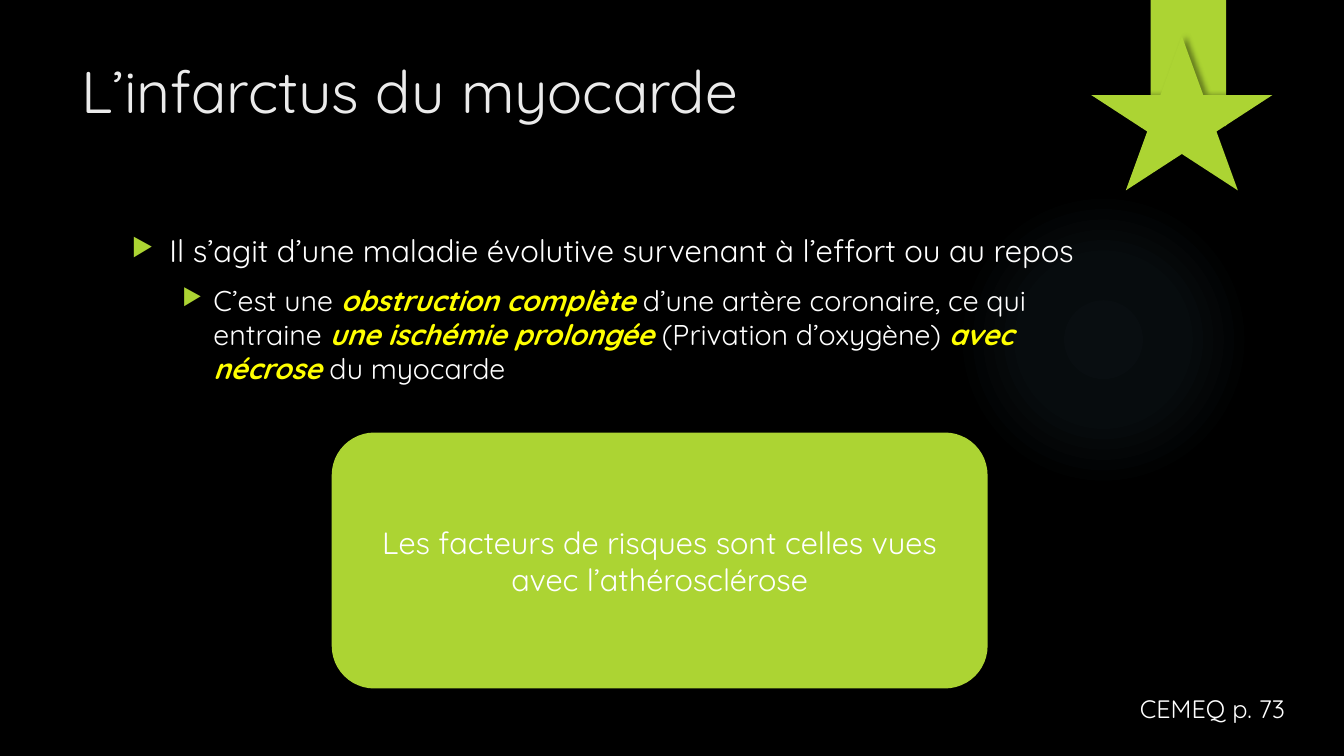
from lxml import etree
from pptx import Presentation
from pptx.dml.color import RGBColor
from pptx.enum.shapes import MSO_SHAPE
from pptx.enum.text import MSO_ANCHOR, MSO_AUTO_SIZE, PP_ALIGN
from pptx.oxml import parse_xml
from pptx.oxml.ns import qn
from pptx.util import Cm, Pt

LEFT, CENTER = PP_ALIGN.LEFT, PP_ALIGN.CENTER
TOP, MIDDLE = MSO_ANCHOR.TOP, MSO_ANCHOR.MIDDLE
NO_FIT = MSO_AUTO_SIZE.NONE
GREEN, WHITE, YELLOW = "ACD433", "FFFFFF", "FFFF00"
DRAWING = "http://schemas.openxmlformats.org/drawingml/2006/main"


def color(hex_code):
    return RGBColor.from_string(hex_code)


def add_span(para, text, hex_code, **formats):
    span = para.add_run()
    span.text = text
    span.font.color.rgb = color(hex_code)
    for name, value in {"name": "Quicksand", **formats}.items():
        setattr(span.font, name, value)


deck = Presentation()
deck.slide_width, deck.slide_height = Cm(33.87), Cm(19.05)
page = deck.slides.add_slide(deck.slide_layouts[5])
page.background.fill.solid()
page.background.fill.fore_color.rgb = color("000000")

# Faint blue glow, fading into the black background
glow = page.shapes.add_shape(MSO_SHAPE.OVAL, Cm(23.9), Cm(4.65), Cm(7.82), Cm(7.82))
glow.shadow.inherit = False
glow.line.fill.background()
glow.fill.background()
stops = "".join(
    f'<a:gs pos="{place * 1000}"><a:srgbClr val="{hex_code}"/></a:gs>'
    for place, hex_code in ((0, "090E11"), (36, "070C0E"), (69, "000000")))
gradient = parse_xml(
    f'<a:gradFill xmlns:a="{DRAWING}"><a:gsLst>{stops}</a:gsLst><a:path path="circle">'
    '<a:fillToRect l="50000" t="50000" r="50000" b="50000"/></a:path></a:gradFill>')
properties = glow.element.spPr
properties.replace(properties.find(qn("a:noFill")), gradient)

# Ribbon, star and risk box: preset, left, top, width, height,
# shadow (opacity, blur, distance, angle)
green_shapes = [
    (MSO_SHAPE.RECTANGLE, 29, 0, 1.9, 3.18, (45, 3, 2, 90)),
    (MSO_SHAPE.STAR_5_POINT, 27.5, 0.91, 4.57, 3.89, (40, 4, 3, 0)),
    (MSO_SHAPE.ROUNDED_RECTANGLE, 8.36, 10.9, 16.53, 6.45, (20, 6, 1, 45)),
]
for preset, left, top, width, height, shade in green_shapes:
    shape = page.shapes.add_shape(preset, Cm(left), Cm(top), Cm(width), Cm(height))
    shape.fill.solid()
    shape.fill.fore_color.rgb = color(GREEN)
    shape.line.fill.background()
    shape.shadow.inherit = False
    opacity, blur, distance, angle = shade
    shadow = etree.SubElement(
        shape.element.spPr.find(qn("a:effectLst")), qn("a:outerShdw"),
        blurRad=str(Pt(blur)), dist=str(Pt(distance)), dir=str(angle * 60000),
        algn="ctr", rotWithShape="0")
    tint = etree.SubElement(shadow, qn("a:srgbClr"), val="000000")
    etree.SubElement(tint, qn("a:alpha"), val=str(opacity * 1000))

# Text of the risk box, the last green shape
risk_frame = shape.text_frame
risk_frame.word_wrap = True
risk_frame.vertical_anchor = MIDDLE
risk_frame.paragraphs[0].alignment = CENTER
add_span(risk_frame.paragraphs[0],
         "Les facteurs de risques sont celles vues avec l’athérosclérose",
         WHITE, size=Pt(22))

# Title
title = page.shapes.title
title.left, title.top, title.width, title.height = Cm(1.8), Cm(1.25), Cm(26.14), Cm(3.89)
for name, value in {"vertical_anchor": TOP, "word_wrap": True, "auto_size": NO_FIT}.items():
    setattr(title.text_frame, name, value)
title.text_frame.paragraphs[0].alignment = LEFT
add_span(title.text_frame.paragraphs[0], "L’infarctus du myocarde", "EBEBEB", size=Pt(42))

# Bulleted text: level, indent, hanging, size, space before, spans
plain = {"bold": False, "italic": False}
strong = {"bold": True, "italic": True}
points = [
    (0, 0.95, 0.95, 22.2, 0, [
        ("Il s’agit d’une maladie évolutive survenant à l’effort ou au repos", WHITE, plain)]),
    (1, 2.06, 0.79, 20.4, 10, [
        ("C’est une ", WHITE, plain),
        ("obstruction complète ", YELLOW, strong),
        ("d’une artère coronaire, ce qui entraine ", WHITE, plain),
        ("une ischémie prolongée ", YELLOW, strong),
        ("(Privation d’oxygène) ", WHITE, plain),
        ("avec nécrose ", YELLOW, strong),
        ("du myocarde", WHITE, plain)]),
]
body = page.shapes.add_textbox(Cm(3.07), Cm(5.71), Cm(24.84), Cm(4.57))
body.text_frame.word_wrap = True
for number, (level, indent, hanging, size, before, spans) in enumerate(points):
    para = body.text_frame.add_paragraph() if number else body.text_frame.paragraphs[0]
    layout = para._p.get_or_add_pPr()
    layout.set("marL", str(Cm(indent)))
    layout.set("indent", str(-Cm(hanging)))
    bullet_color = etree.SubElement(layout, qn("a:buClr"))
    etree.SubElement(bullet_color, qn("a:srgbClr"), val=GREEN)
    etree.SubElement(layout, qn("a:buSzPct"), val="80000")
    etree.SubElement(layout, qn("a:buFont"), typeface="OpenSymbol")
    etree.SubElement(layout, qn("a:buChar"), char="▶")
    para.level = level
    para.space_before = Pt(before)
    for text, hex_code, formats in spans:
        add_span(para, text, hex_code, size=Pt(size), **formats)

# Page reference
reference = page.shapes.add_textbox(Cm(28.48), Cm(17.35), Cm(4.7), Cm(1.02))
reference.text_frame.word_wrap = True
add_span(reference.text_frame.paragraphs[0], "CEMEQ p. 73", WHITE, size=Pt(18))

deck.save("out.pptx")
